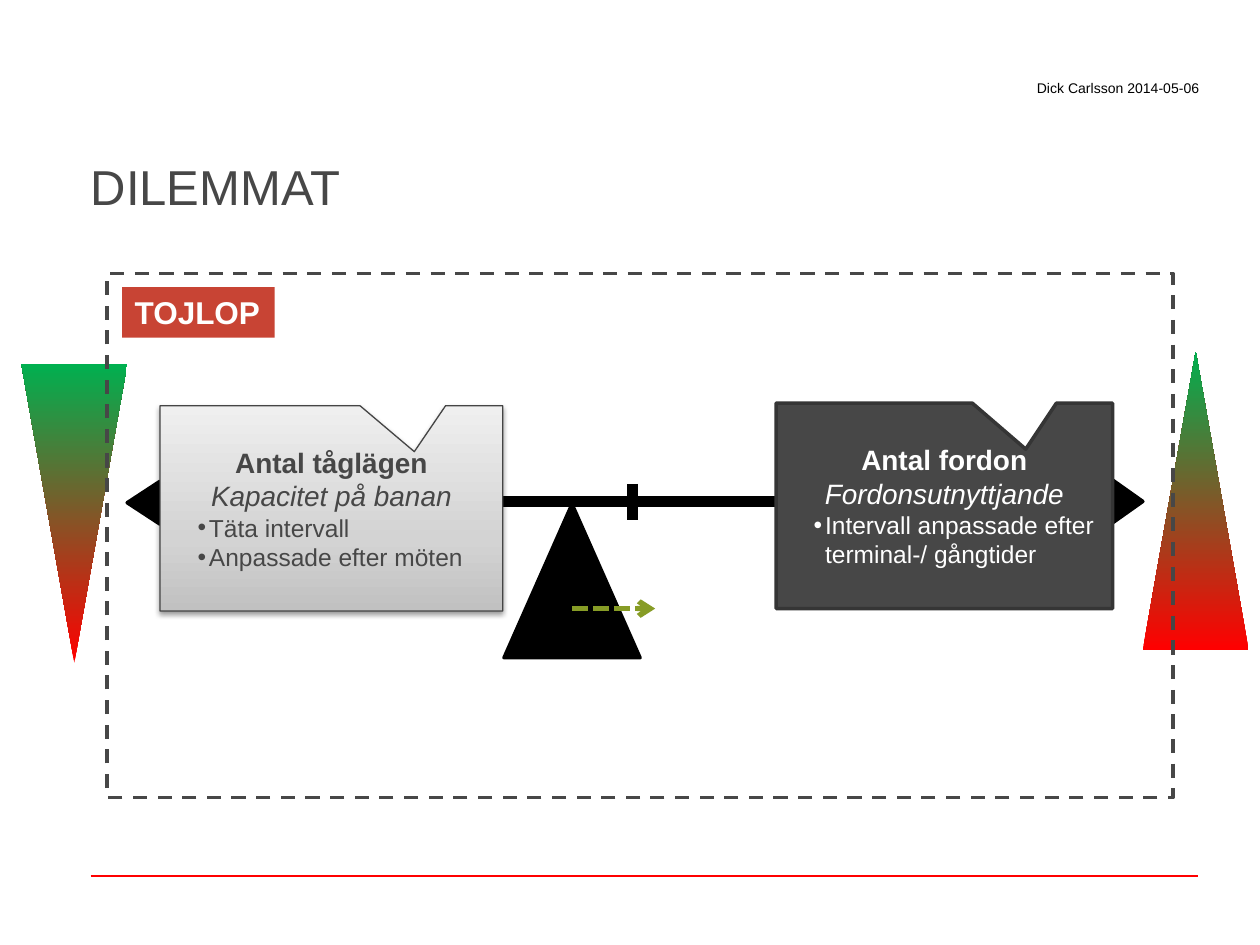
from copy import deepcopy
from dataclasses import dataclass

from lxml import etree
from pptx import Presentation, util as u
from pptx.dml.color import RGBColor
from pptx.enum import dml, shapes, text
from pptx.oxml import parse_xml
from pptx.oxml.ns import nsdecls, qn
from pptx.util import Inches


@dataclass(frozen=True)
class Theme:
    font: str = "Arial"
    dark: str = "474747"
    black: str = "000000"
    white: str = "FFFFFF"
    red: str = "FF0000"
    green: str = "00B050"
    tag: str = "C84434"
    arrow: str = "879C26"
    light_edge: str = "454545"
    dark_edge: str = "353535"
    silver: tuple = ((0, "C1C1C1"), (0.35, "D3D3D3"), (1, "EFEFEF"))
    title_size: int = 28
    tag_size: int = 18
    head_size: int = 16
    bullet_size: int = 14
    note_size: int = 8


theme = Theme()
auto = shapes.MSO_SHAPE


def add_span(para, words, size, color, bold=False, italic=False):
    span = para.add_run()
    span.text = words
    font = span.font
    font.name, font.size, font.bold, font.italic = theme.font, u.Pt(size), bold, italic
    font.color.rgb = RGBColor.from_string(color)


def style(item, fill=None, line=None, width=0, angle=90):
    """Set fill (a colour, or gradient stops) and line; a connector has no fill."""
    if hasattr(item, "fill"):
        item.shadow.inherit = False
        if fill is None:
            item.fill.background()
        elif isinstance(fill, str):
            item.fill.solid()
            item.fill.fore_color.rgb = RGBColor.from_string(fill)
        else:
            item.fill.gradient()
            item.fill.gradient_angle = angle
            stops = item._element.spPr.find(qn("a:gradFill")).find(qn("a:gsLst"))
            while len(stops) < len(fill):
                stops.append(deepcopy(stops[0]))
            for stop, (position, color) in zip(item.fill.gradient_stops, fill):
                stop.position = position
                stop.color.rgb = RGBColor.from_string(color)
    if line:
        item.line.color.rgb = RGBColor.from_string(line)
        item.line.width = u.Pt(width)
    else:
        item.line.fill.background()
    if not hasattr(item, "fill"):
        etree.SubElement(item._element.spPr, qn("a:effectLst"))


deck = Presentation()
deck.slide_width, deck.slide_height = Inches(10), Inches(7.5)
page = deck.slides.add_slide(deck.slide_layouts[5])
canvas = page.shapes

# Title and author note
title = canvas.title
title.left, title.top, title.width, title.height = map(Inches, (0.72, 0.83, 8.78, 0.88))
note = canvas.add_textbox(*map(Inches, (6.37, 0.64, 3.15, 0.12)))
for box, words, size, color, align, anchor in (
    (title, "DILEMMAT", theme.title_size, theme.dark, text.PP_ALIGN.LEFT, text.MSO_ANCHOR.BOTTOM),
    (note, "Dick Carlsson 2014-05-06", theme.note_size, theme.black,
     text.PP_ALIGN.RIGHT, text.MSO_ANCHOR.MIDDLE),
):
    frame = box.text_frame
    frame.auto_size = text.MSO_AUTO_SIZE.NONE
    frame.word_wrap = True
    frame.vertical_anchor = anchor
    frame.margin_left = frame.margin_top = frame.margin_right = frame.margin_bottom = 0
    frame.paragraphs[0].alignment = align
    add_span(frame.paragraphs[0], words, size, color)

# Black triangles: beam tips and fulcrum
for place, rotation in (
    ((0.97, 3.86, 0.34, 0.26), 270),
    ((8.78, 3.86, 0.34, 0.24), 90),
    ((4, 4, 1.08, 1.22), 0),
):
    triangle = canvas.add_shape(auto.ISOSCELES_TRIANGLE, *map(Inches, place))
    triangle.rotation = rotation
    style(triangle, theme.black, theme.black, 2)

# Footer rule and balance beam
for ends, color, width in (
    ((0.72, 6.95, 9.51, 6.95), theme.red, 1),
    ((2.4, 3.98, 7.34, 3.98), theme.black, 6),
):
    rule = canvas.add_connector(shapes.MSO_CONNECTOR.STRAIGHT, *map(Inches, ends))
    style(rule, line=color, width=width)

# Weights on the beam
weights = (
    ((1.27, 3.22, 2.72, 1.63), theme.silver, theme.light_edge, 0.75, theme.dark,
     "Antal tåglägen", "Kapacitet på banan", ("Täta intervall", "Anpassade efter möten")),
    ((6.16, 3.2, 2.67, 1.63), theme.dark, theme.dark_edge, 2, theme.white,
     "Antal fordon", "Fordonsutnyttjande", ("Intervall anpassade efter terminal-/ gångtider",)),
)
for place, fill, edge, width, color, heading, subheading, bullets in weights:
    weight = canvas.add_shape(auto.RECTANGULAR_CALLOUT, *map(Inches, place))
    weight.adjustments[0], weight.adjustments[1] = 0.242, -0.276
    style(weight, fill, edge, width)
    if fill is theme.silver:
        weight._element.spPr.find(qn("a:effectLst")).append(parse_xml(
            f'<a:outerShdw {nsdecls("a")} blurRad="{u.Pt(3.1)}" dist="{u.Pt(1.6)}" '
            f'dir="5400000" rotWithShape="0"><a:srgbClr val="{theme.black}">'
            '<a:alpha val="38000"/></a:srgbClr></a:outerShdw>'))
    frame = weight.text_frame
    frame.word_wrap = True
    frame.vertical_anchor = text.MSO_ANCHOR.MIDDLE
    para = frame.paragraphs[0]
    para.alignment = text.PP_ALIGN.CENTER
    add_span(para, heading, theme.head_size, color, bold=True)
    para = frame.add_paragraph()
    para.alignment = text.PP_ALIGN.CENTER
    add_span(para, subheading, theme.head_size, color, italic=True)
    for words in bullets:
        para = frame.add_paragraph()
        para.alignment = text.PP_ALIGN.LEFT
        props = para._p.get_or_add_pPr()
        props.set("marL", str(Inches(0.29)))
        props.set("indent", str(Inches(-0.09)))
        etree.SubElement(props, qn("a:buFont"), typeface=theme.font)
        etree.SubElement(props, qn("a:buChar"), char="•")
        add_span(para, words, theme.bullet_size, color)

# Red-to-green scales at both sides
for left, top, rotation, angle in ((0.17, 2.89, 180, 270), (9.07, 2.79, 0, 90)):
    scale = canvas.add_shape(
        auto.ISOSCELES_TRIANGLE, *map(Inches, (left, top, 0.84, 2.37)))
    scale.rotation = rotation
    style(scale, ((0, theme.red), (1, theme.green)), angle=angle)

# Midpoint mark on the beam
mark = canvas.add_connector(
    shapes.MSO_CONNECTOR.STRAIGHT, *map(Inches, (5.02, 3.84, 5.02, 4.13)))
style(mark, line=theme.black, width=6)

# Dashed frame and its tag
border = canvas.add_shape(auto.RECTANGLE, *map(Inches, (0.85, 2.17, 8.46, 4.16)))
style(border, line=theme.dark, width=2)
border.line.dash_style = dml.MSO_LINE.DASH

tag = canvas.add_shape(auto.RECTANGLE, *map(Inches, (0.97, 2.28, 1.21, 0.4)))
style(tag, theme.tag)
frame = tag.text_frame
frame.word_wrap = False
frame.auto_size = text.MSO_AUTO_SIZE.SHAPE_TO_FIT_TEXT
frame.vertical_anchor = text.MSO_ANCHOR.TOP
frame.paragraphs[0].alignment = text.PP_ALIGN.LEFT
add_span(frame.paragraphs[0], "TOJLOP", theme.tag_size, theme.white, bold=True)

# Arrow moving the fulcrum
shift = canvas.add_connector(
    shapes.MSO_CONNECTOR.STRAIGHT, *map(Inches, (4.54, 4.83, 5.2, 4.83)))
style(shift, line=theme.arrow, width=3)
shift.line.dash_style = dml.MSO_LINE.SQUARE_DOT
etree.SubElement(shift.line._get_or_add_ln(), qn("a:tailEnd"), type="arrow")

deck.save("out.pptx")
